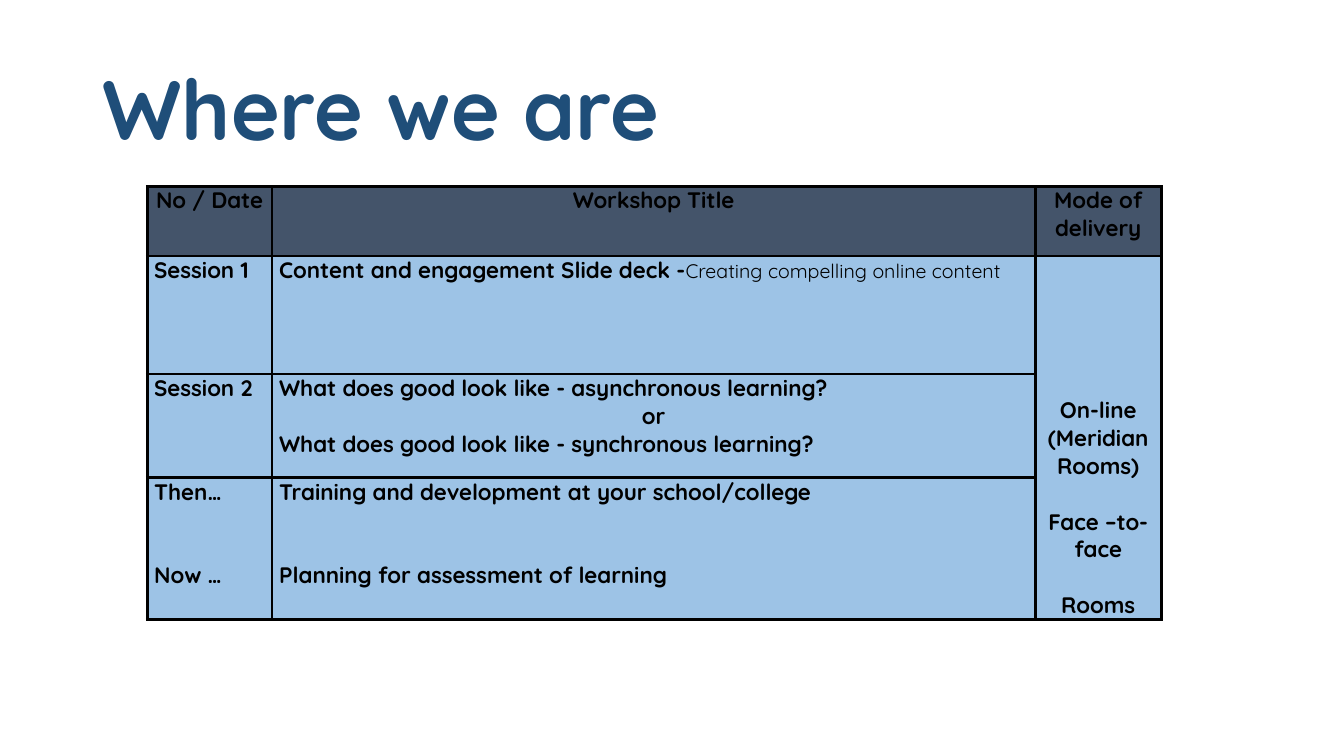
from dataclasses import dataclass

from lxml import etree
from pptx import Presentation
from pptx import util as u
from pptx.dml.color import RGBColor
from pptx.enum import text
from pptx.oxml import ns

FONT = "Quicksand"
NAVY = RGBColor(0x1F, 0x4E, 0x79)
SLATE = RGBColor(0x44, 0x54, 0x6A)
SKY = RGBColor(0x9D, 0xC3, 0xE6)
BLACK = RGBColor(0, 0, 0)

WIDTH, HEIGHT = u.Inches(13.33), u.Inches(7.5)
LINE = 20  # points taken by one line of table text
BORDER = u.Pt(2.25)

# Table grid, in percent of the slide's width and height
TABLE_LEFT, TABLE_TOP = 10.95, 24.67
COLUMNS = (9.3, 56.78, 9.38)
ROWS = (9.2, 15.6, 13.73, 18.8)


@dataclass(frozen=True)
class Para:
    words: str
    centred: bool = False
    gap_lines: int = 0
    detail: str = ""


@dataclass(frozen=True)
class Entry:
    row: int
    column: int
    paras: tuple[Para, ...]
    drop_lines: int = 0


ENTRIES = (
    Entry(0, 0, (Para("No / Date", True),)),
    Entry(0, 1, (Para("Workshop Title", True),)),
    Entry(0, 2, (Para("Mode of delivery", True),)),
    Entry(1, 0, (Para("Session 1"),)),
    Entry(1, 1, (Para("Content and engagement Slide deck -",
                      detail="Creating compelling online content"),)),
    Entry(1, 2, (Para("On-line (Meridian Rooms)", True),
                 Para("Face –to-face", True, 1),
                 Para("Rooms", True, 1)), drop_lines=5),
    Entry(2, 0, (Para("Session 2"),)),
    Entry(2, 1, (Para("What does good look like - asynchronous learning?"),
                 Para("or", True),
                 Para("What does good look like - synchronous learning?"))),
    Entry(3, 0, (Para("Then…"), Para("Now …", gap_lines=2))),
    Entry(3, 1, (Para("Training and development at your school/college"),
                 Para("Planning for assessment of learning", gap_lines=2))),
)


def across(percent: float) -> int:
    return round(WIDTH * percent / 100)


def down(percent: float) -> int:
    return round(HEIGHT * percent / 100)


def write(paragraph, words: str, *, size: float = 16, bold: bool = True,
          colour: RGBColor = BLACK) -> None:
    run = paragraph.add_run()
    run.text = words
    run.font.name = FONT
    run.font.size = u.Pt(size)
    run.font.bold = bold
    run.font.color.rgb = colour


def add_border(cell) -> None:
    properties = cell._tc.get_or_add_tcPr()
    for side in ("a:lnL", "a:lnR", "a:lnT", "a:lnB"):
        edge = etree.SubElement(properties, ns.qn(side), w=str(BORDER))
        fill = etree.SubElement(edge, ns.qn("a:solidFill"))
        etree.SubElement(fill, ns.qn("a:srgbClr"), val=str(BLACK))


def fill_entry(table, entry: Entry) -> None:
    cell = table.cell(entry.row, entry.column)
    cell.margin_top = u.Pt(LINE * entry.drop_lines)
    frame = cell.text_frame
    for index, para in enumerate(entry.paras):
        paragraph = frame.add_paragraph() if index else frame.paragraphs[0]
        paragraph.alignment = (text.PP_ALIGN.CENTER if para.centred
                               else text.PP_ALIGN.LEFT)
        if para.gap_lines:
            paragraph.space_before = u.Pt(LINE * para.gap_lines)
        write(paragraph, para.words)
        if para.detail:
            write(paragraph, para.detail, size=14, bold=False)


def add_title(slide) -> None:
    title = slide.shapes.add_textbox(
        across(6.9), down(5.33), across(86.25), down(19.33))
    frame = title.text_frame
    frame.word_wrap = True
    frame.vertical_anchor = text.MSO_ANCHOR.MIDDLE
    frame.paragraphs[0].line_spacing = 0.9
    write(frame.paragraphs[0], "Where we are", size=60, colour=NAVY)


def add_workshops(slide) -> None:
    table = slide.shapes.add_table(
        len(ROWS), len(COLUMNS), across(TABLE_LEFT), down(TABLE_TOP),
        across(sum(COLUMNS)), down(sum(ROWS))).table
    table.first_row = table.horz_banding = False
    for column, share in zip(table.columns, COLUMNS):
        column.width = across(share)
    for row, share in zip(table.rows, ROWS):
        row.height = down(share)

    # Cell look
    for number, row in enumerate(table.rows):
        for cell in row.cells:
            cell.margin_left = cell.margin_right = u.Inches(0.07)
            cell.margin_top = cell.margin_bottom = 0
            add_border(cell)
            cell.fill.solid()
            cell.fill.fore_color.rgb = SKY if number else SLATE

    # One delivery mode for all sessions
    table.cell(1, 2).merge(table.cell(3, 2))
    for entry in ENTRIES:
        fill_entry(table, entry)


def main() -> None:
    deck = Presentation()
    deck.slide_width, deck.slide_height = WIDTH, HEIGHT
    slide = deck.slides.add_slide(deck.slide_layouts[6])
    add_title(slide)
    add_workshops(slide)
    deck.save("out.pptx")


if __name__ == "__main__":
    main()
